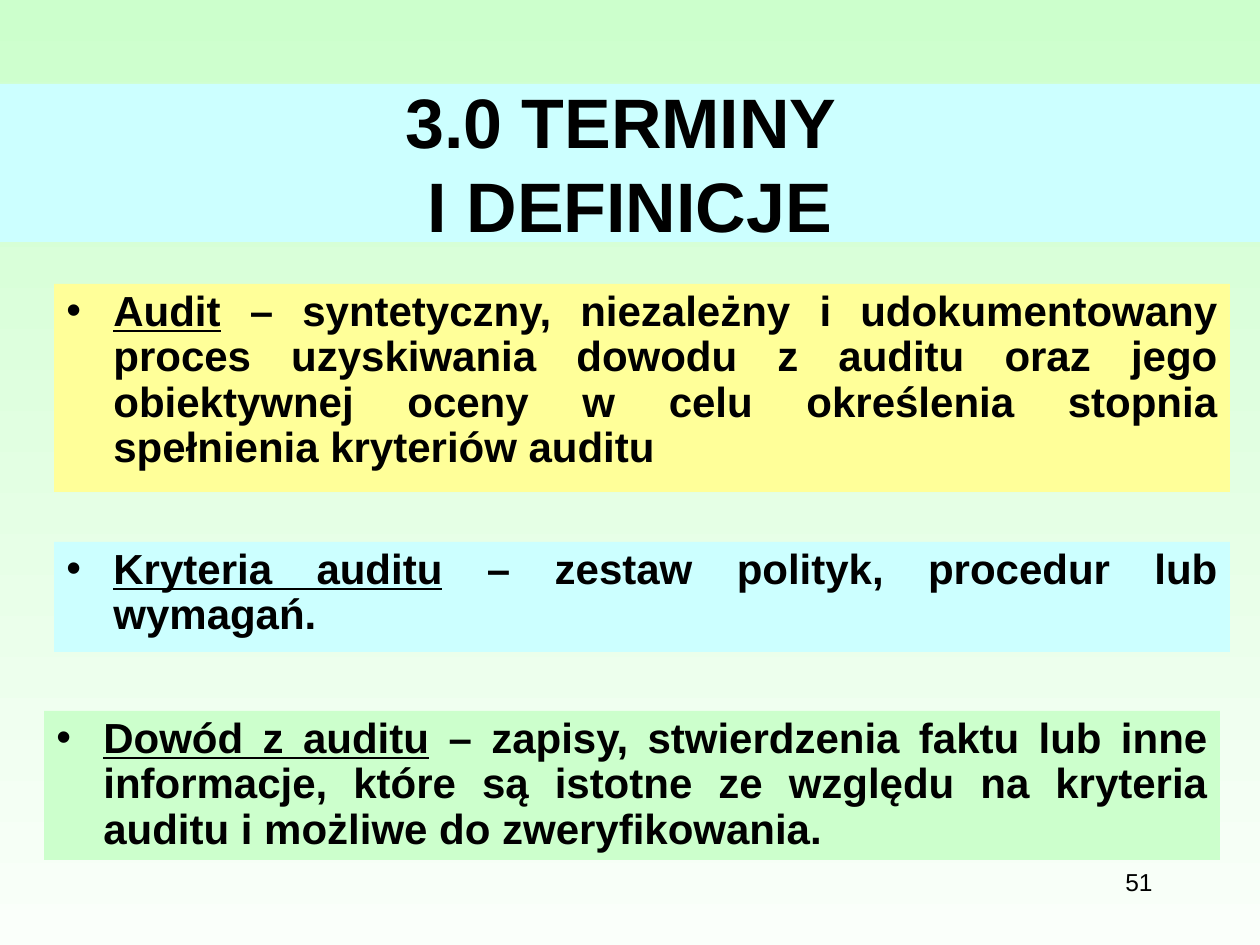
import pptx
import pptx.dml.color
import pptx.enum.shapes
import pptx.enum.text
import pptx.oxml
import pptx.oxml.ns
import pptx.util

PX = 914400 / 126
FONT = "Arial"
COLORS = {
    "text": "000000",
    "green": "CCFFCC",
    "pale": "FAFFFA",
    "cyan": "CCFFFF",
    "yellow": "FFFF99",
}
DEFINITIONS = [
    ((54, 284, 1176, 208), "yellow", "Audit",
     " – syntetyczny, niezależny i udokumentowany proces uzyskiwania dowodu z auditu "
     "oraz jego obiektywnej oceny w celu określenia stopnia spełnienia kryteriów auditu"),
    ((54, 542, 1176, 110), "cyan", "Kryteria auditu",
     " – zestaw polityk, procedur lub wymagań."),
    ((44, 711, 1176, 149), "green", "Dowód z auditu",
     " – zapisy, stwierdzenia faktu lub inne informacje, które są istotne ze względu "
     "na kryteria auditu i możliwe do zweryfikowania."),
]


def emu(pixels):
    """Turn pixels into EMU."""
    return pptx.util.Emu(round(pixels * PX))


def rgb(name):
    """Return the named colour."""
    return pptx.dml.color.RGBColor.from_string(COLORS[name])


def fill_shape(shape, color):
    """Give a shape a plain fill."""
    shape.fill.solid()
    shape.fill.fore_color.rgb = rgb(color)


def format_runs(paragraph, size, bold):
    """Set the font of every run in a paragraph."""
    for run in paragraph.runs:
        run.font.name = FONT
        run.font.size = pptx.util.Pt(size)
        run.font.bold = bold
        run.font.color.rgb = rgb("text")


def set_background(slide):
    """Fill the slide with a gradient running from top to bottom."""
    fill = slide.background.fill
    fill.gradient()
    fill.gradient_angle = 270
    for stop, position, color in zip(fill.gradient_stops, (0, 1), ("green", "pale")):
        stop.position = position
        stop.color.rgb = rgb(color)


def place_title(slide, box):
    """Place the two-line title on its full-width band."""
    title = slide.shapes.title
    title.left, title.top, title.width, title.height = map(emu, box)
    fill_shape(title, "cyan")
    frame = title.text_frame
    frame.text = "3.0 TERMINY \vI DEFINICJE"
    frame.auto_size = pptx.enum.text.MSO_AUTO_SIZE.NONE
    frame.vertical_anchor = pptx.enum.text.MSO_ANCHOR.MIDDLE
    frame.paragraphs[0].alignment = pptx.enum.text.PP_ALIGN.CENTER
    format_runs(frame.paragraphs[0], 40, True)


def format_bullet(paragraph):
    """Add a hanging bullet and proportional spacing to a paragraph."""
    paragraph.alignment = pptx.enum.text.PP_ALIGN.JUSTIFY
    paragraph.line_spacing = 0.9
    properties = paragraph._p.get_or_add_pPr()
    properties.set("marL", str(emu(47)))
    properties.set("indent", str(emu(-47)))
    namespace = pptx.oxml.ns.nsdecls("a")
    for xml in (
        f'<a:spcBef {namespace}><a:spcPct val="20000"/></a:spcBef>',
        f'<a:buFont {namespace} typeface="{FONT}"/>',
        f'<a:buChar {namespace} char="•"/>',
    ):
        properties.append(pptx.oxml.parse_xml(xml))


def place_definition(slide, box, color, term, meaning):
    """Place a coloured panel with an underlined term and its meaning."""
    panel = slide.shapes.add_shape(
        pptx.enum.shapes.MSO_SHAPE.RECTANGLE, *map(emu, box))
    panel.shadow.inherit = False
    panel.line.fill.background()
    fill_shape(panel, color)
    frame = panel.text_frame
    frame.word_wrap = True
    frame.vertical_anchor = pptx.enum.text.MSO_ANCHOR.TOP
    paragraph = frame.paragraphs[0]
    format_bullet(paragraph)
    for text, underline in ((term, True), (meaning, False)):
        run = paragraph.add_run()
        run.text = text
        run.font.underline = underline
    format_runs(paragraph, 24, True)


def place_number(slide, box):
    """Place the slide number, aligned right."""
    frame = slide.shapes.add_textbox(*map(emu, box)).text_frame
    frame.word_wrap = True
    frame.text = "51"
    frame.paragraphs[0].alignment = pptx.enum.text.PP_ALIGN.RIGHT
    format_runs(frame.paragraphs[0], 14, False)


def main():
    """Build and save the slide."""
    presentation = pptx.Presentation()
    presentation.slide_width = emu(1260)
    presentation.slide_height = emu(945)
    slide = presentation.slides.add_slide(presentation.slide_layouts[5])
    set_background(slide)
    place_number(slide, (903, 861, 262, 63))
    place_title(slide, (0, 84, 1260, 158))
    for definition in DEFINITIONS:
        place_definition(slide, *definition)
    presentation.save("out.pptx")


if __name__ == "__main__":
    main()
